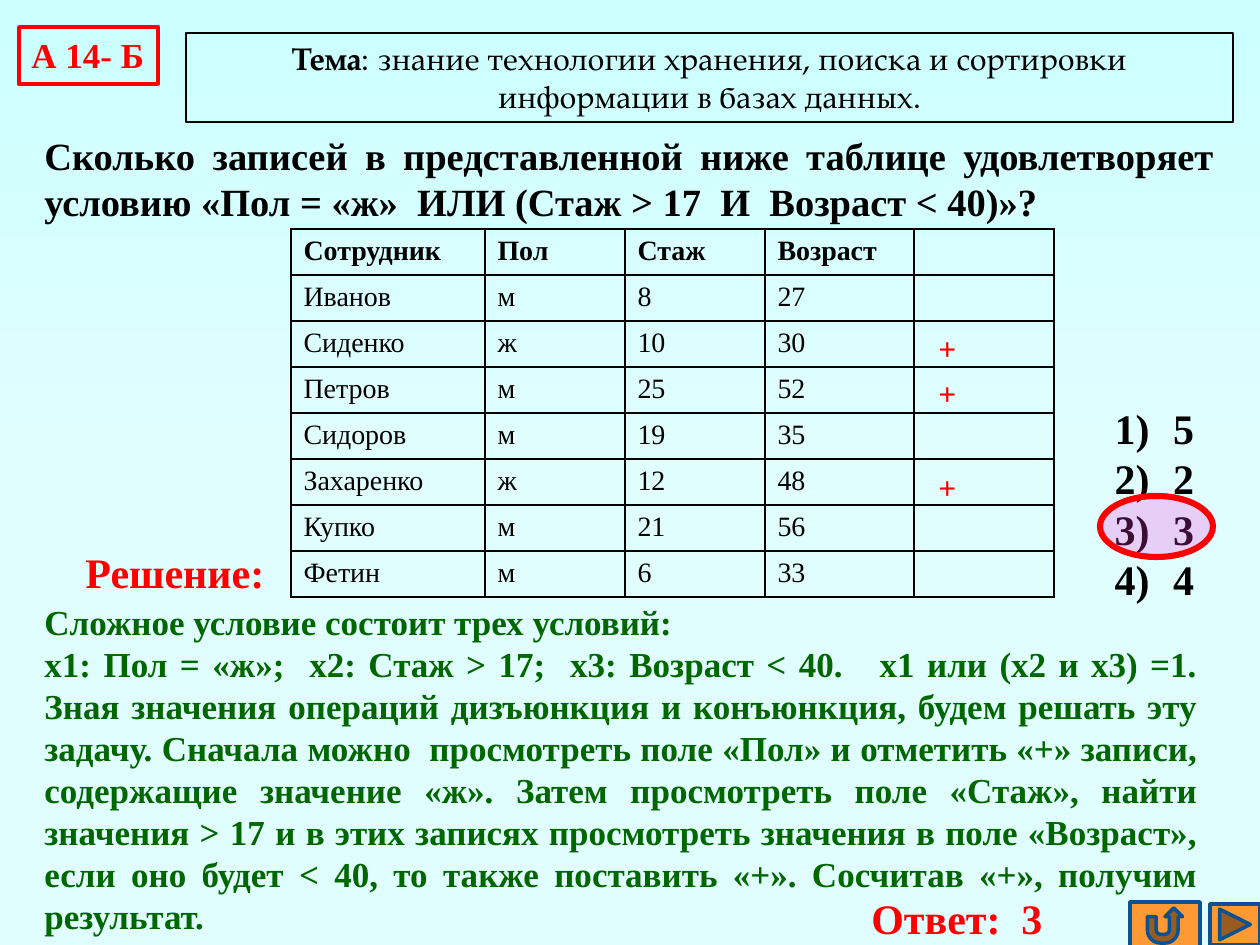
from lxml.etree import SubElement
from pptx import Presentation
from pptx.dml.color import RGBColor
from pptx.enum.shapes import MSO_SHAPE as Preset
from pptx.enum.text import MSO_ANCHOR as Anchor, MSO_AUTO_SIZE as AutoSize, PP_ALIGN as Align
from pptx.oxml.ns import qn
from pptx.util import Emu, Pt

EMU_PER_PX = 914400 / 126
BLACK, RED, GREEN = "000000", "FF0000", "006600"
ORANGE, NAVY, PINK = "FF9933", "0B5292", "FB37DF"
SERIF, PAGELLA = "Times New Roman", "TeX Gyre Pagella"


def px(length):
    return Emu(round(length * EMU_PER_PX))


def color(hex_code):
    return RGBColor.from_string(hex_code)


def write(paragraph, text, size=20, hue=BLACK, bold=True, font=SERIF, align=Align.LEFT):
    """Add one formatted run to a paragraph."""
    paragraph.alignment = align
    run = paragraph.add_run()
    run.text = text
    run.font.name, run.font.size, run.font.bold = font, Pt(size), bold
    run.font.color.rgb = color(hue)


class SlideBuilder:
    def __init__(self, slide):
        self.slide = slide

    def background(self, top, bottom):
        fill = self.slide.background.fill
        fill.gradient()
        fill.gradient_angle = 270
        for stop, hue, position in zip(fill.gradient_stops, (top, bottom), (0, 0.5)):
            stop.color.rgb = color(hue)
            stop.position = position

    def frame(self, shape):
        """Prepare a top-anchored, wrapping text frame."""
        frame = shape.text_frame
        frame.word_wrap = True
        frame.auto_size = AutoSize.NONE
        frame.vertical_anchor = Anchor.TOP
        return frame

    def placeholder(self, index, box):
        holder = self.slide.placeholders[index]
        holder.left, holder.top, holder.width, holder.height = map(px, box)
        return holder

    def title(self, box, runs, **style):
        holder = self.placeholder(0, box)
        holder.line.color.rgb = color(BLACK)
        holder.line.width = Pt(1)
        paragraph = self.frame(holder).paragraphs[0]
        for text, bold in runs:
            write(paragraph, text, bold=bold, **style)

    def numbered_list(self, box, items, hanging, **style):
        frame = self.frame(self.placeholder(1, box))
        for number, item in enumerate(items):
            paragraph = frame.add_paragraph() if number else frame.paragraphs[0]
            write(paragraph, item, **style)
            paragraph.space_before = Pt(0)
            properties = paragraph._p.get_or_add_pPr()
            properties.set("marL", str(px(hanging)))
            properties.set("indent", str(-px(hanging)))
            SubElement(properties, qn("a:buFont"), typeface="+mj-lt")
            SubElement(properties, qn("a:buAutoNum"), type="arabicParenR")

    def text(self, box, *paragraphs, **style):
        frame = self.frame(self.slide.shapes.add_textbox(*map(px, box)))
        for number, content in enumerate(paragraphs):
            write(frame.add_paragraph() if number else frame.paragraphs[0], content, **style)

    def shape(self, preset, box, line, width, fill=None, opacity=None):
        shape = self.slide.shapes.add_shape(preset, *map(px, box))
        shape.shadow.inherit = False
        shape.line.color.rgb = color(line)
        shape.line.width = Pt(width)
        if fill is None:
            shape.fill.background()
            return shape
        shape.fill.solid()
        shape.fill.fore_color.rgb = color(fill)
        if opacity:
            solid = shape._element.spPr.find(qn("a:solidFill"))
            SubElement(solid[0], qn("a:alpha"), val=str(opacity * 1000))
        return shape

    def border(self, cell):
        properties = cell._tc.get_or_add_tcPr()
        for side in ("lnL", "lnR", "lnT", "lnB"):
            line = SubElement(properties, qn(f"a:{side}"), w=str(Pt(1)))
            solid = SubElement(line, qn("a:solidFill"))
            SubElement(solid, qn("a:srgbClr"), val=BLACK)

    def table(self, left, top, widths, row_height, rows, **style):
        box = (left, top, sum(widths), row_height * len(rows))
        table = self.slide.shapes.add_table(len(rows), len(widths), *map(px, box)).table
        table.horz_banding = table.first_row = False
        for column, width in zip(table.columns, widths):
            column.width = px(width)
        for r, row in enumerate(rows):
            table.rows[r].height = px(row_height)
            for c, value in enumerate(row):
                cell = table.cell(r, c)
                # No bottom margin, so that no row outgrows its height
                cell.margin_bottom = 0
                write(cell.text_frame.paragraphs[0], value, bold=r == 0, **style)
                self.border(cell)
                cell.fill.background()


def main():
    deck = Presentation()
    deck.slide_width, deck.slide_height = px(1260), px(945)
    page = SlideBuilder(deck.slides.add_slide(deck.slide_layouts[1]))
    page.background("CCFFFF", "E1FEFF")

    # Heading: task number and topic
    task_number = page.shape(Preset.RECTANGLE, (19, 27, 139, 57), RED, 2)
    write(page.frame(task_number).paragraphs[0], "А 14- Б", hue=RED)
    page.title((186, 33, 1047, 89), [
        ("Тема", True),
        (": знание технологии хранения, поиска и сортировки информации в базах данных.", False),
    ], size=18, font=PAGELLA, align=Align.CENTER)

    # Question
    page.text((32, 126, 1194, 106),
              "Сколько записей в представленной ниже таблице удовлетворяет условию "
              "«Пол = «ж»  ИЛИ (Стаж > 17  И  Возраст < 40)»?",
              size=22, align=Align.JUSTIFY)

    # Employee records, with an empty column for the marks
    employees = [
        ("Сотрудник", "Пол", "Стаж", "Возраст", ""),
        ("Иванов", "м", "8", "27", ""),
        ("Сиденко", "ж", "10", "30", ""),
        ("Петров", "м", "25", "52", ""),
        ("Сидоров", "м", "19", "35", ""),
        ("Захаренко", "ж", "12", "48", ""),
        ("Купко", "м", "21", "56", ""),
        ("Фетин", "м", "6", "33", ""),
    ]
    page.table(291, 229, (194, 140, 140, 149, 140), 46, employees, size=16)
    for mark_top in (323, 368, 462):
        page.text((926, mark_top, 44, 50), "+", size=18, hue=RED)

    # Answer options, with the right one circled
    page.numbered_list((1102, 396, 118, 217), (" 5", " 2", " 3", " 4"), 48, size=24)
    page.shape(Preset.OVAL, (1100, 496, 113, 61), RED, 3.5, PINK, 24)

    # Solution
    page.text((73, 540, 207, 63), "Решение:", size=24, hue=RED)
    page.text((32, 594, 1178, 351),
              "Сложное условие состоит трех условий:",
              "x1: Пол = «ж»;  x2: Стаж > 17;  x3: Возраст < 40.   x1 или (x2 и x3) =1. "
              "Зная значения операций дизъюнкция и конъюнкция, будем решать эту задачу. "
              "Сначала можно  просмотреть поле «Пол» и отметить «+» записи, содержащие "
              "значение «ж». Затем просмотреть поле «Стаж», найти значения > 17 и в этих "
              "записях просмотреть значения в поле «Возраст», если оно будет < 40, то также "
              "поставить «+». Сосчитав «+», получим результат.",
              hue=GREEN, align=Align.JUSTIFY)
    page.text((859, 886, 262, 63), "Ответ:  3", size=24, hue=RED)

    # Navigation buttons
    page.shape(Preset.ACTION_BUTTON_FORWARD_OR_NEXT, (1210, 904, 50, 41), NAVY, 2, ORANGE)
    page.shape(Preset.ACTION_BUTTON_RETURN, (1130, 902, 70, 47), NAVY, 2, ORANGE)

    deck.save("out.pptx")


if __name__ == "__main__":
    main()
